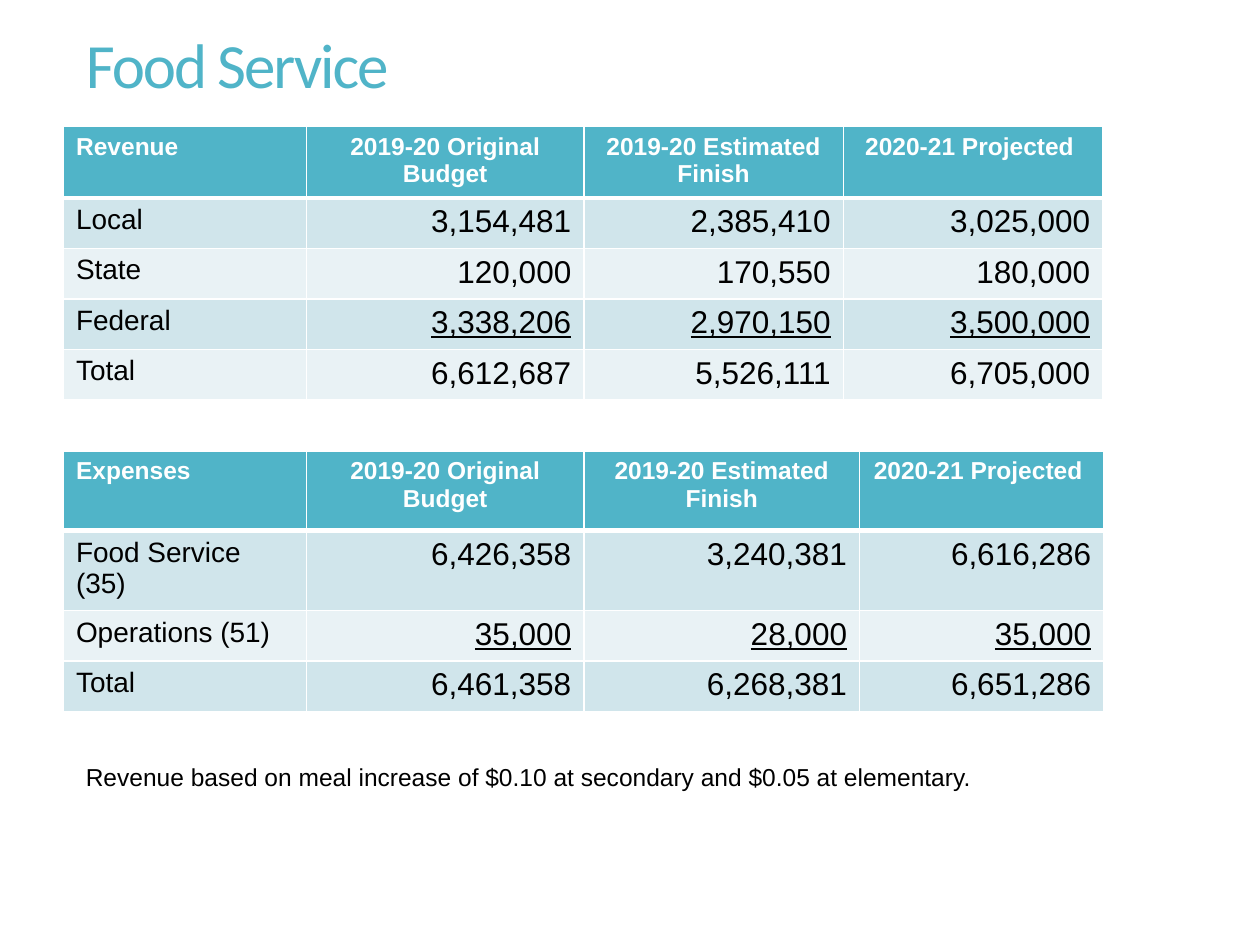
from lxml import etree
from pptx import Presentation
from pptx import util as u
from pptx.dml.color import RGBColor
from pptx.enum import text
from pptx.oxml import ns

COLORS = {"accent": "50B4C8", "band": "D0E5EB", "light": "E9F2F5",
          "white": "FFFFFF", "black": "000000"}

HEADINGS = ["2019-20 Original Budget", "2019-20 Estimated Finish", "2020-21 Projected "]
REVENUE = [
    ["Revenue", *HEADINGS],
    ["Local", "3,154,481", "2,385,410", "3,025,000"],
    ["State", "120,000", "170,550", "180,000"],
    ["Federal", "3,338,206", "2,970,150", "3,500,000"],
    ["Total", "6,612,687", "5,526,111", "6,705,000"],
]
EXPENSES = [
    ["Expenses", *HEADINGS],
    ["Food Service (35)", "6,426,358", "3,240,381", "6,616,286"],
    ["Operations (51)", "35,000", "28,000", "35,000"],
    ["Total", "6,461,358", "6,268,381", "6,651,286"],
]
ROW_HEIGHT = 0.92


def write_text(frame, content, color, size, align=text.PP_ALIGN.LEFT, **formats):
    paragraph = frame.paragraphs[0]
    paragraph.alignment = align
    run = paragraph.add_run()
    run.text = content
    for name, value in {"name": "Arial", "size": u.Pt(size), **formats}.items():
        setattr(run.font, name, value)
    run.font.color.rgb = RGBColor.from_string(COLORS[color])
    return run


def add_text_box(slide, box, anchor):
    frame = slide.shapes.add_textbox(*(u.Cm(value) for value in box)).text_frame
    frame.word_wrap = True
    frame.vertical_anchor = anchor
    return frame


def set_borders(cell, top=1, bottom=1):
    properties = cell._tc.get_or_add_tcPr()
    widths = {"a:lnL": 1, "a:lnR": 1, "a:lnT": top, "a:lnB": bottom}
    for position, (tag, width) in enumerate(widths.items()):
        line = etree.Element(ns.qn(tag), w=str(u.Pt(width)))
        fill = etree.SubElement(line, ns.qn("a:solidFill"))
        etree.SubElement(fill, ns.qn("a:srgbClr"), val=COLORS["white"])
        properties.insert(position, line)


def add_title(slide, box):
    frame = add_text_box(slide, box, text.MSO_ANCHOR.MIDDLE)
    run = write_text(frame, "Food Service", "accent", 36, name="Calibri")
    frame.paragraphs[0].line_spacing = 0.9
    run.font._element.set("spc", "-120")


def add_budget_table(slide, left, top, rows, widths, header_height):
    heights = [header_height] + [ROW_HEIGHT] * (len(rows) - 1)
    table = slide.shapes.add_table(
        len(rows), len(widths), u.Cm(left), u.Cm(top),
        u.Cm(sum(widths)), u.Cm(sum(heights))).table
    for column, width in zip(table.columns, widths):
        column.width = u.Cm(width)
    for row, height in zip(table.rows, heights):
        row.height = u.Cm(height)

    for i, values in enumerate(rows):
        # The row above the total is underlined
        underlined = i == len(rows) - 2
        for j, value in enumerate(values):
            cell = table.cell(i, j)
            cell.fill.solid()
            fill = "accent" if i == 0 else "band" if i % 2 else "light"
            cell.fill.fore_color.rgb = RGBColor.from_string(COLORS[fill])
            set_borders(cell, top=3 if i == 1 else 1, bottom=3 if i == 0 else 1)
            if i == 0:
                align = text.PP_ALIGN.CENTER if j else text.PP_ALIGN.LEFT
                write_text(cell.text_frame, value, "white", 14, align, bold=True)
            elif j == 0:
                write_text(cell.text_frame, value, "black", 16, bold=False)
            else:
                write_text(cell.text_frame, value, "black", 18, text.PP_ALIGN.RIGHT,
                           bold=False, underline=underlined)


def add_note(slide, box):
    frame = add_text_box(slide, box, text.MSO_ANCHOR.TOP)
    frame.auto_size = text.MSO_AUTO_SIZE.SHAPE_TO_FIT_TEXT
    write_text(frame, "Revenue based on meal increase of $0.10 at secondary "
               "and $0.05 at elementary.", "black", 14)


def main():
    presentation = Presentation()
    presentation.slide_width, presentation.slide_height = u.Cm(25.4), u.Cm(19.05)
    slide = presentation.slides.add_slide(presentation.slide_layouts[6])

    add_title(slide, (1.48, 0.2, 22.73, 2.34))
    add_budget_table(slide, 1.28, 2.55, REVENUE, [4.9, 5.59, 5.23, 5.23], ROW_HEIGHT)
    add_budget_table(slide, 1.28, 9.1, EXPENSES, [4.9, 5.59, 5.56, 4.92], 1.6)
    add_note(slide, (1.48, 15.24, 18.85, 0.86))

    presentation.save("out.pptx")


if __name__ == "__main__":
    main()
